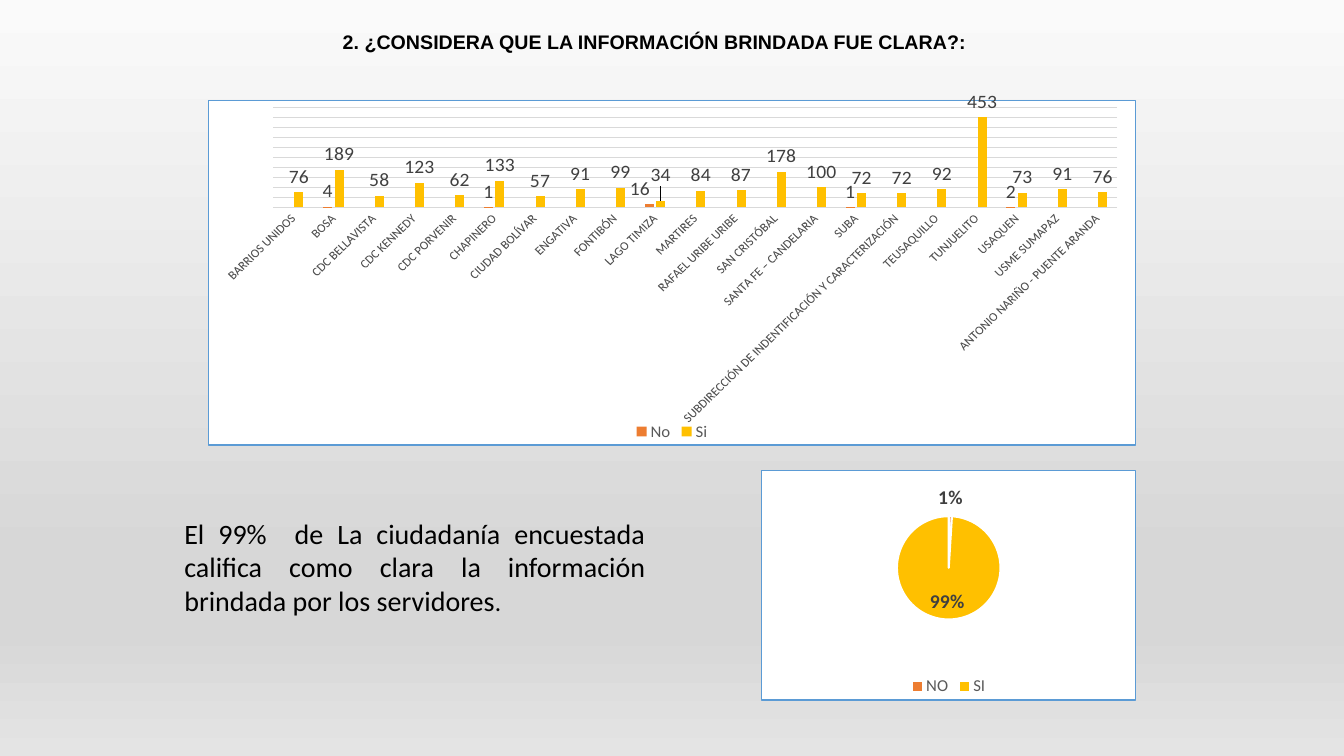
"""Build the survey slide on how clear the information was."""
import pptx
import pptx.chart.data
import pptx.dml.color
import pptx.enum.chart
import pptx.enum.text
import pptx.oxml
import pptx.oxml.ns
import pptx.util

Inches, Pt = pptx.util.Inches, pptx.util.Pt
XL = pptx.enum.chart
PP = pptx.enum.text
NS = pptx.oxml.ns.nsdecls("a", "c", "p")
COLORS = {"black": "000000", "white": "FFFFFF", "label": "404040", "axis": "595959",
          "grid": "D9D9D9", "border": "5B9BD5", "no": "ED7D31", "si": "FFC000"}
BACKGROUND_STOPS = {0: "FAFAFA", 74: "D7D7D7", 83: "D7D7D7", 100: "E4E4E4"}
LEGEND_FONT = {"size": Pt(12), "color": "axis"}
LABEL_FONT = {"size": Pt(14), "color": "label"}
CENTERS = {
    "BARRIOS UNIDOS": (None, 76), "BOSA": (4, 189), "CDC BELLAVISTA": (None, 58),
    "CDC KENNEDY": (None, 123), "CDC PORVENIR": (None, 62), "CHAPINERO": (1, 133),
    "CIUDAD BOLÍVAR": (None, 57), "ENGATIVA": (None, 91), "FONTIBÓN": (None, 99),
    "LAGO TIMIZA": (16, 34), "MARTIRES": (None, 84), "RAFAEL URIBE URIBE": (None, 87),
    "SAN CRISTÓBAL": (None, 178), "SANTA FE – CANDELARIA": (None, 100), "SUBA": (1, 72),
    "SUBDIRECCIÓN DE INDENTIFICACIÓN Y CARACTERIZACIÓN": (None, 72),
    "TEUSAQUILLO": (None, 92), "TUNJUELITO": (None, 453), "USAQUEN": (2, 73),
    "USME SUMAPAZ": (None, 91), "ANTONIO NARIÑO - PUENTE ARANDA": (None, 76),
}


def rgb(name):
    return pptx.dml.color.RGBColor.from_string(COLORS[name])


def apply(obj, values):
    for key, value in values.items():
        setattr(obj, key, value)


def set_font(font, size, color="black", name="Calibri", bold=False):
    apply(font, {"size": size, "name": name, "bold": bold})
    font.color.rgb = rgb(color)


def set_fill(fmt, color):
    fmt.fill.solid()
    fmt.fill.fore_color.rgb = rgb(color)


def set_line(line, color, width):
    line.color.rgb = rgb(color)
    line.width = Pt(width)


def set_background(s):
    stops = "".join(f'<a:gs pos="{pos * 1000}"><a:srgbClr val="{color}"/></a:gs>'
                    for pos, color in BACKGROUND_STOPS.items())
    s.shapes._spTree.addprevious(pptx.oxml.parse_xml(
        f'<p:bg {NS}><p:bgPr><a:gradFill rotWithShape="1"><a:gsLst>{stops}</a:gsLst>'
        '<a:lin ang="5400000" scaled="0"/></a:gradFill><a:effectLst/></p:bgPr></p:bg>'))


def write_text(sp, box, align, runs):
    apply(sp, dict(zip(("left", "top", "width", "height"), map(Inches, box))))
    tf = sp.text_frame
    apply(tf, {"word_wrap": True, "vertical_anchor": PP.MSO_ANCHOR.TOP,
               "auto_size": PP.MSO_AUTO_SIZE.SHAPE_TO_FIT_TEXT})
    p = tf.paragraphs[0]
    p.alignment = align
    for text, font in runs:
        r = p.add_run()
        r.text = text
        set_font(r.font, **font)


def layout_xml(x, y, w=None, h=None):
    modes, sizes = "", ""
    if w:
        modes = '<c:layoutTarget val="inner"/><c:xMode val="edge"/><c:yMode val="edge"/>'
        sizes = f'<c:w val="{w}"/><c:h val="{h}"/>'
    return pptx.oxml.parse_xml(
        f'<c:layout {NS}><c:manualLayout>{modes}<c:x val="{x}"/><c:y val="{y}"/>'
        f'{sizes}</c:manualLayout></c:layout>')


def add_chart(s, kind, box, data, plot_box):
    chart = s.shapes.add_chart(kind, *map(Inches, box), data).chart
    apply(chart, {"has_title": False, "has_legend": True})
    set_font(chart.font, Pt(10))
    apply(chart.legend, {"position": XL.XL_LEGEND_POSITION.BOTTOM,
                         "include_in_layout": False})
    set_font(chart.legend.font, **LEGEND_FONT)
    space = chart._chartSpace
    space.find(pptx.oxml.ns.qn("c:txPr")).addprevious(pptx.oxml.parse_xml(
        f'<c:spPr {NS}><a:solidFill><a:srgbClr val="{COLORS["white"]}"/></a:solidFill>'
        f'<a:ln w="{Pt(0.75)}"><a:solidFill><a:srgbClr val="{COLORS["border"]}"/>'
        '</a:solidFill></a:ln></c:spPr>'))
    area = space.chart.plotArea
    for old in area.xpath("c:layout"):
        area.remove(old)
    area.insert(0, layout_xml(*plot_box))
    return chart


def show_labels(labels, bold=False, **values):
    apply(labels, values)
    set_font(labels.font, bold=bold, **LABEL_FONT)


def shift_label(series, index, x, y):
    label = series.points[index].data_label
    label.position = XL.XL_LABEL_POSITION.OUTSIDE_END
    set_font(label.font, **LABEL_FONT)
    series._element.xpath(f"c:dLbls/c:dLbl[c:idx/@val={index}]")[0].insert(1, layout_xml(x, y))


def add_center_chart(s):
    data = pptx.chart.data.CategoryChartData()
    data.categories = list(CENTERS)
    for name, values in zip(("No", "Si"), zip(*CENTERS.values())):
        data.add_series(name, values)
    chart = add_chart(s, XL.XL_CHART_TYPE.COLUMN_CLUSTERED, (2.06, 0.89, 9.21, 3.53),
                      data, (0.07, 0.02, 0.91, 0.29))
    plot = chart.plots[0]
    apply(plot, {"gap_width": 219, "overlap": -27, "vary_by_categories": False})
    shifts = ((-0.01, 0), (0, -0.03))
    for series, color, shift in zip(plot.series, ("no", "si"), shifts):
        set_fill(series.format, color)
        show_labels(series.data_labels, show_value=True,
                    position=XL.XL_LABEL_POSITION.OUTSIDE_END)
        shift_label(series, list(CENTERS).index("LAGO TIMIZA"), *shift)
    axis = chart.category_axis
    axis.major_tick_mark = XL.XL_TICK_MARK.NONE
    set_font(axis.tick_labels.font, Pt(9), "axis")
    set_line(axis.format.line, "grid", 0.75)
    axis._element.xpath("c:txPr/a:bodyPr")[0].set("rot", "-2700000")
    axis = chart.value_axis
    apply(axis, {"visible": False, "has_major_gridlines": True, "minimum_scale": 0,
                 "maximum_scale": 500, "major_unit": 50})
    set_line(axis.major_gridlines.format.line, "grid", 0.75)


def add_share_chart(s):
    data = pptx.chart.data.CategoryChartData()
    data.categories = ["NO", "SI"]
    data.add_series("Series 1", (1, 99))
    chart = add_chart(s, XL.XL_CHART_TYPE.PIE, (7.55, 4.66, 3.72, 2.29),
                      data, (0.36, 0.2, 0.28, 0.45))
    chart.plots[0].vary_by_categories = True
    series = chart.plots[0].series[0]
    for index, color in enumerate(("no", "si")):
        fmt = series.points[index].format
        set_fill(fmt, color)
        set_line(fmt.line, "white", 1.5)
    show_labels(series.data_labels, bold=True, show_percentage=True, show_value=False,
                number_format="0%", number_format_is_linked=False,
                position=XL.XL_LABEL_POSITION.OUTSIDE_END)
    label = series.points[1].data_label
    label.position = XL.XL_LABEL_POSITION.INSIDE_END
    set_font(label.font, bold=True, **LABEL_FONT)
    for tag, value in (("showVal", "0"), ("showPercent", "1")):
        series._element.xpath(f"c:dLbls/c:dLbl/c:{tag}")[0].set("val", value)


def main():
    prs = pptx.Presentation()
    apply(prs, {"slide_width": Inches(13.33), "slide_height": Inches(7.5)})
    s = prs.slides.add_slide(prs.slide_layouts.get_by_name("Title Only"))
    set_background(s)
    write_text(s.shapes.title, (3.23, 0.19, 7.79, 0.4), PP.PP_ALIGN.LEFT, [
        (" ", {"size": Pt(18), "name": "Arial"}),
        ("2. ¿CONSIDERA QUE LA INFORMACIÓN BRINDADA FUE CLARA?:",
         {"size": Pt(14), "name": "Arial", "bold": True})])
    box = (1.73, 5.07, 4.77, 1.11)
    write_text(s.shapes.add_textbox(*map(Inches, box)), box, PP.PP_ALIGN.JUSTIFY, [
        ("El 99%  de La ciudadanía encuestada califica como clara la información "
         "brindada por los servidores", {"size": Pt(20)}),
        (".", {"size": Pt(18)})])
    add_center_chart(s)
    add_share_chart(s)
    prs.save("out.pptx")


if __name__ == "__main__":
    main()
